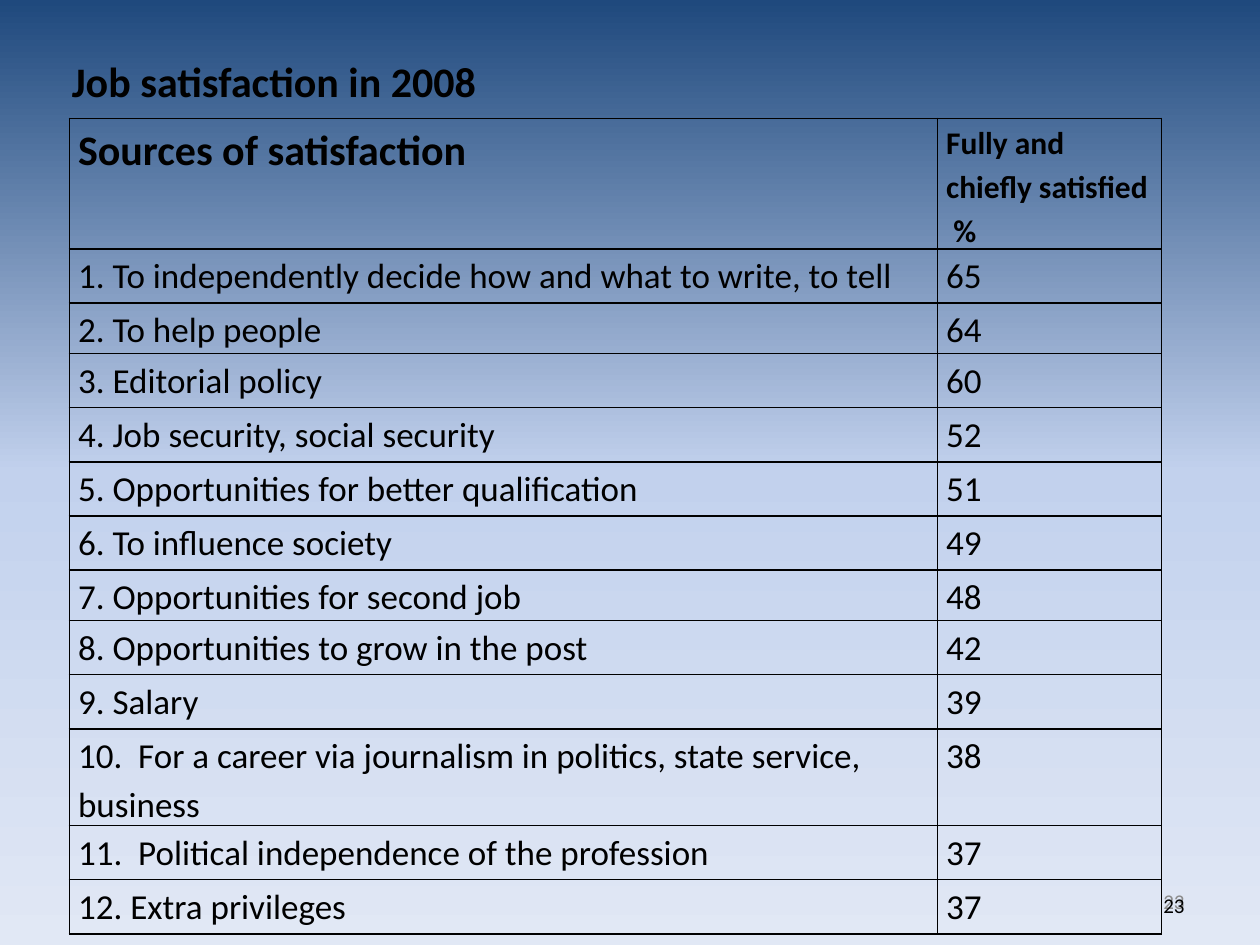
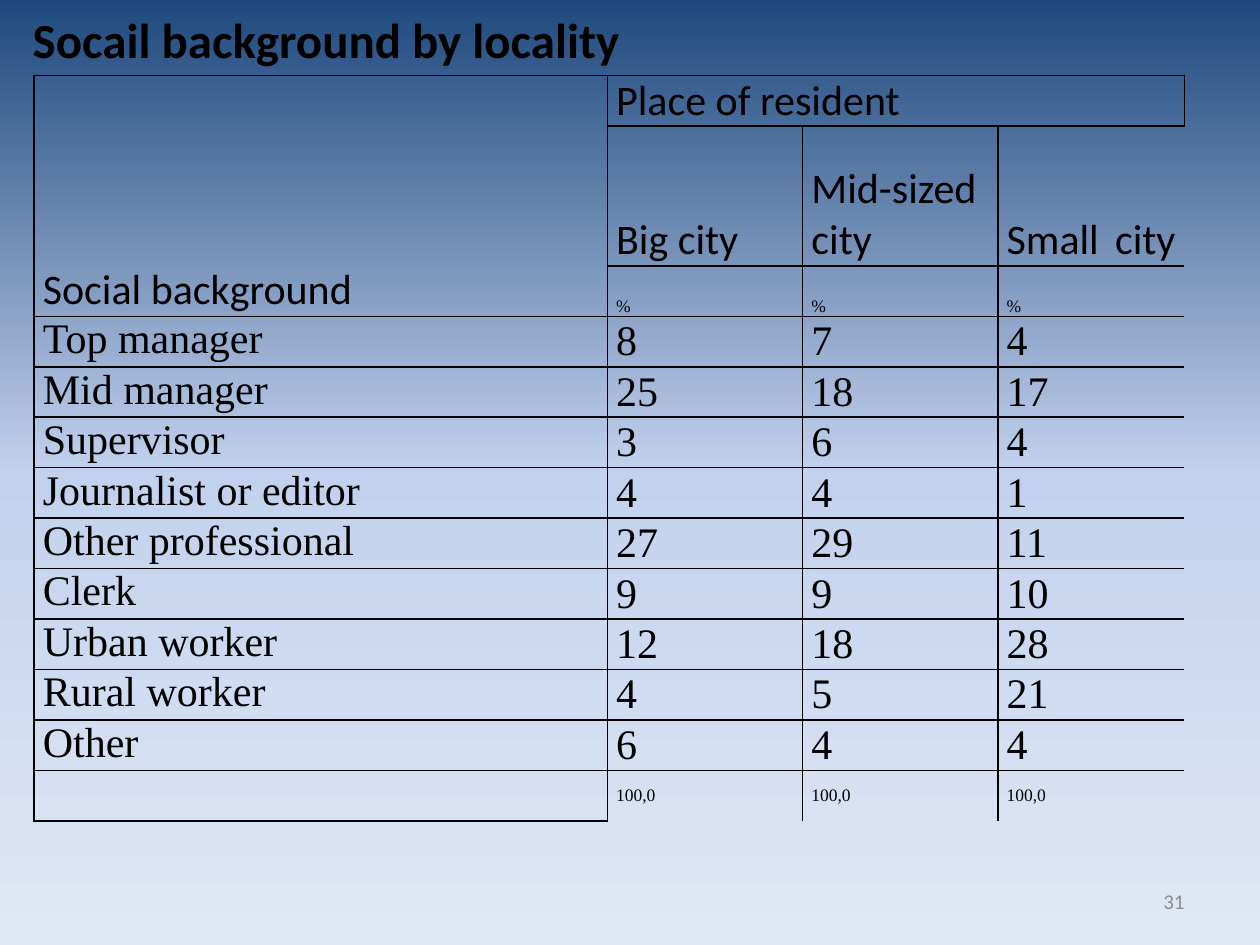
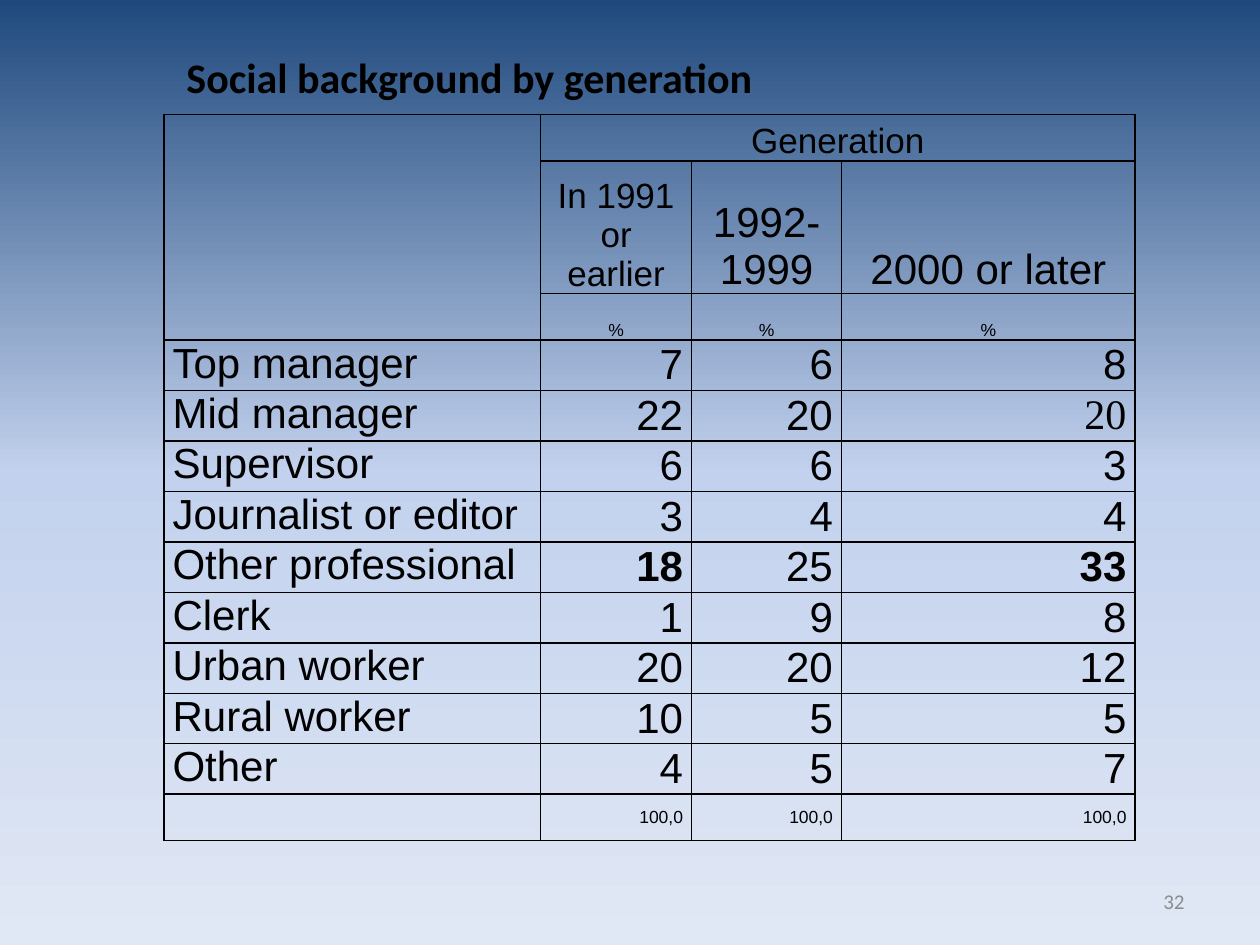
"""Build three slides of survey tables on journalists: job satisfaction and social background."""
from copy import deepcopy
from dataclasses import dataclass

from lxml.etree import SubElement as Sub
from pptx import Presentation
from pptx.dml.color import RGBColor as Rgb
from pptx.enum.text import MSO_ANCHOR as Anchor, PP_ALIGN as Align
from pptx.oxml.ns import qn
from pptx.util import Inches, Pt


@dataclass
class Theme:
    sky: tuple = ((0, "1F497D"), (0.5, "C2D1ED"), (1, "E1E8F5"))
    ink: str = "000000"
    mute: str = "8C8C8C"
    sans: str = "Calibri"
    serif: str = "Times New Roman"
    plain: str = "Arial"
    big: int = 28
    head: int = 24
    body: int = 20
    sub: int = 18
    page: int = 12
    tiny: int = 10
    line: int = 1
    pad: float = 0.07
    style: str = "{2D5ABB26-0587-4C30-8999-92F81FD0307C}"


look = Theme()


def write(frame, text, size, font=look.sans, align=Align.LEFT, bold=False, tone=look.ink):
    frame.text = text
    para = frame.paragraphs[0]
    para.alignment = align
    for run in para.runs:
        run.font.size = Pt(size)
        run.font.name = font
        run.font.bold = bold
        run.font.color.rgb = Rgb.from_string(tone)


def grid(slide, left, top, cols, rows, ajar=False):
    frame = slide.shapes.add_table(len(rows), len(cols), Inches(left), Inches(top),
                                   Inches(sum(cols)), Inches(sum(rows)))
    table = frame.table
    table.first_row = table.horz_banding = False
    table._tbl.tblPr.find(qn("a:tableStyleId")).text = look.style
    for col, wide in zip(table.columns, cols):
        col.width = Inches(wide)
    for y, tall in enumerate(rows):
        table.rows[y].height = Inches(tall)
        for x in range(len(cols)):
            cell = table.cell(y, x)
            cell.margin_left = cell.margin_right = Inches(look.pad)
            cell.margin_top = cell.margin_bottom = 0
            props = cell._tc.get_or_add_tcPr()
            for side in "LRTB":
                line = Sub(props, qn(f"a:ln{side}"), w=str(Pt(look.line)))
                bare = ajar and (side == "R" and x == len(cols) - 1 and y > 0
                                 or side == "B" and y == len(rows) - 1 and x > 0)
                if bare:
                    Sub(line, qn("a:noFill"))
                else:
                    Sub(Sub(line, qn("a:solidFill")), qn("a:srgbClr"), val=look.ink)
            cell.fill.background()
    return table


deck = Presentation()
deck.slide_width, deck.slide_height = Inches(10), Inches(7.5)

sky = deck.slide_master.background.fill
sky.gradient()
sky.gradient_angle = 270
stops = deck.slide_master._element.find(".//" + qn("a:gsLst"))
stops.insert(1, deepcopy(stops[0]))
for stop, (place, tone) in zip(sky.gradient_stops, look.sky):
    stop.position = place
    stop.color.rgb = Rgb.from_string(tone)

heads = [
    ("Job satisfaction in 2008", look.head, (0.47, 0.39, 3.55, 0.5), "23"),
    ("Socail background by locality", look.big, (0.16, 0.02, 4.97, 0.57), "31"),
    ("Social background by generation", look.head, (1.38, 0.36, 7.09, 0.5), "32"),
]
for text, size, box, page in heads:
    slide = deck.slides.add_slide(deck.slide_layouts[5])
    title = slide.shapes.title
    title.left, title.top, title.width, title.height = map(Inches, box)
    write(title.text_frame, text, size, bold=True)
    title.text_frame.vertical_anchor = Anchor.MIDDLE
    title.text_frame.word_wrap = False
    marks = [(6.95, 0.4, look.mute, Anchor.MIDDLE)]
    if page == "23":
        marks.append((6.83, 0.5, look.ink, Anchor.BOTTOM))
    for top, tall, tone, hold in marks:
        note = slide.shapes.add_textbox(Inches(7.17), Inches(top), Inches(2.33), Inches(tall))
        note.text_frame.word_wrap = True
        note.text_frame.vertical_anchor = hold
        write(note.text_frame, page, look.page, align=Align.RIGHT, tone=tone)

joy, place, age = deck.slides

facts = [
    ("Sources of satisfaction", "Fully and chiefly satisfied  %"),
    ("1. To independently decide how and what to write, to tell", "65"),
    ("2. To help people", "64"),
    ("3. Editorial policy", "60"),
    ("4. Job security, social security", "52"),
    ("5. Opportunities for better qualification", "51"),
    ("6. To influence society", "49"),
    ("7. Opportunities for second job", "48"),
    ("8. Opportunities to grow in the post", "42"),
    ("9. Salary", "39"),
    ("10.  For a career via journalism in politics, state service, business", "38"),
    ("11.  Political independence of the profession", "37"),
    ("12. Extra privileges", "37"),
]
tall = [0.4 if y in (2, 7) else 0.43 for y in range(len(facts))]
tall[0] = 0.51
table = grid(joy, 0.55, 0.94, (6.89, 1.78), tall)
for y, row in enumerate(facts):
    for x, text in enumerate(row):
        frame = table.cell(y, x).text_frame
        size = look.body if y else (look.head, look.sub)[x]
        write(frame, text, size, bold=y == 0)
        frame.paragraphs[0].line_spacing = 1.15
table.cell(0, 1).text_frame.paragraphs[0].space_after = Pt(10)

jobs = ["Top manager", "Mid manager", "Supervisor", "Journalist or editor",
        "Other professional", "Clerk", "Urban worker", "Rural worker", "Other"]
towns = [(8, 7, 4), (25, 18, 17), (3, 6, 4), (4, 4, 1), (27, 29, 11),
         (9, 9, 10), (12, 18, 28), (4, 5, 21), (6, 4, 4)]
years = [(7, 6, 8), (22, 20, 20), (6, 6, 3), (3, 4, 4), (18, 25, 33),
         (1, 9, 8), (20, 20, 12), (10, 5, 5), (4, 5, 7)]

near = grid(place, 0.27, 0.6, (4.55, 1.55, 1.55, 1.48), [0.39, 1.11] + [0.4] * 11, ajar=True)
past = grid(age, 1.3, 0.91, (2.99, 1.2, 1.19, 2.33), [0.37, 1.05, 0.37] + [0.4] * 9 + [0.37])
just, mid, right = Align.JUSTIFY, Align.CENTER, Align.RIGHT
sets = [
    (near, "Place of resident", ("Big city", "Mid-sized city ", "Small city "), towns,
     look.sans, look.serif, look.head, (look.head,) * 3, just, just, just),
    (past, "Generation", ("In 1991 or earlier", "1992-1999", "2000 or later"), years,
     look.plain, look.plain, look.body, (look.body, look.head, look.head), mid, Align.LEFT, right),
]
for table, group, names, data, cap, font, size, sizes, top, side, num in sets:
    table.cell(0, 0).merge(table.cell(2, 0))
    table.cell(0, 1).merge(table.cell(0, 3))
    write(table.cell(0, 1).text_frame, group, size, cap, top)
    table.cell(0, 1).vertical_anchor = Anchor.BOTTOM
    for x, name in enumerate(names, 1):
        write(table.cell(1, x).text_frame, name, sizes[x - 1], cap, top)
        write(table.cell(2, x).text_frame, "%", look.tiny, font, top)
        write(table.cell(12, x).text_frame, "100,0", look.tiny, font, num)
        for y in (1, 2):
            table.cell(y, x).vertical_anchor = Anchor.BOTTOM
        table.cell(12, x).vertical_anchor = Anchor.MIDDLE
    for y, (job, row) in enumerate(zip(jobs, data), 3):
        write(table.cell(y, 0).text_frame, job, look.head, font, side)
        for x, value in enumerate(row, 1):
            write(table.cell(y, x).text_frame, str(value), look.head, font, num)
            table.cell(y, x).vertical_anchor = Anchor.MIDDLE

write(near.cell(0, 0).text_frame, "Social background ", look.head, align=just)
near.cell(0, 0).vertical_anchor = Anchor.BOTTOM
write(past.cell(4, 3).text_frame, "20", look.head, look.serif, right)
for x in (1, 3):
    past.cell(7, x).text_frame.paragraphs[0].runs[0].font.bold = True

deck.save("out.pptx")
